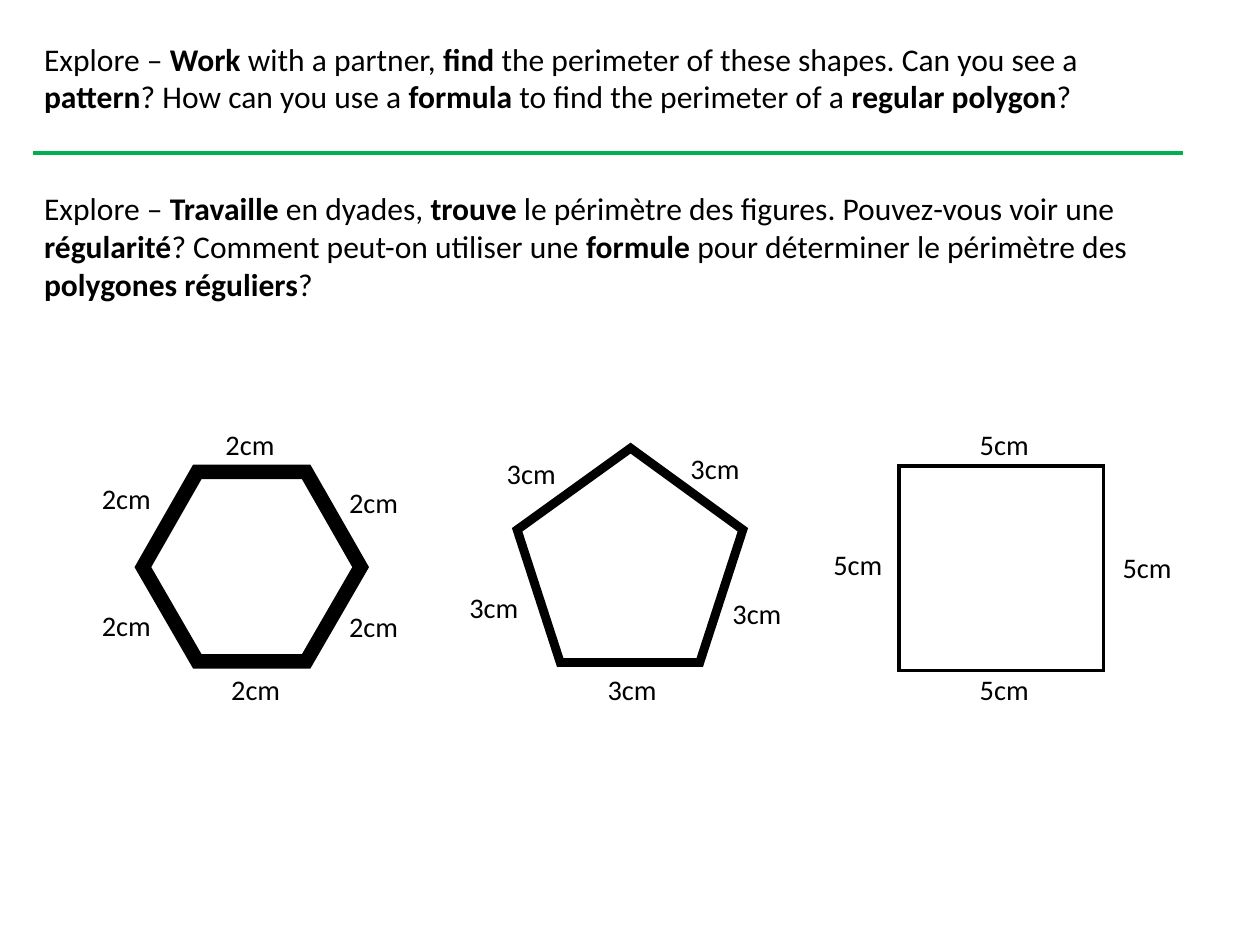
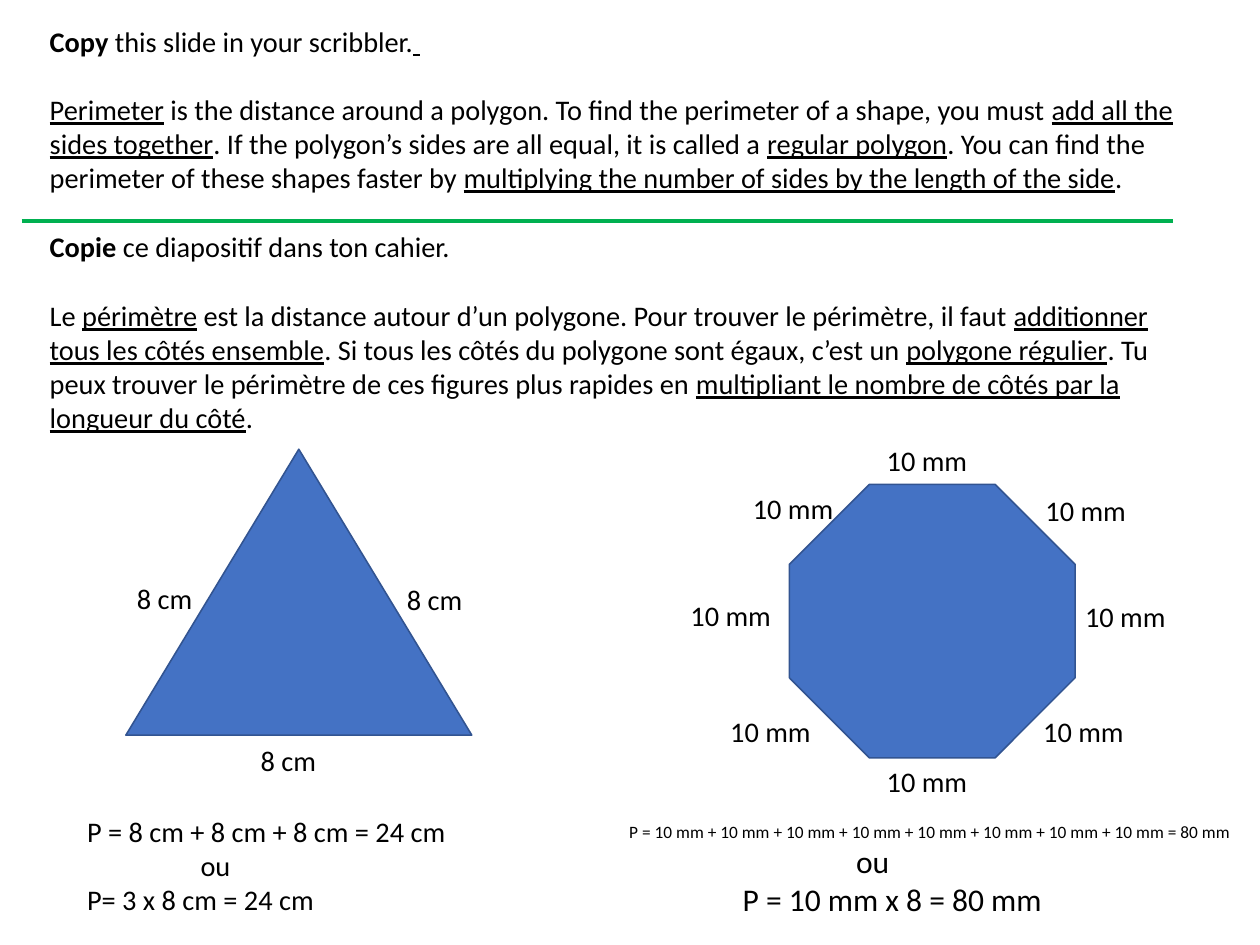
from math import cos, pi, sin

from pptx import Presentation
from pptx.dml.color import RGBColor
from pptx.enum.shapes import MSO_CONNECTOR, MSO_SHAPE
from pptx.oxml.ns import qn
from pptx.util import Pt
from lxml.etree import SubElement

PX = 9144
COLORS = {"text": "000000", "rule": "00B050", "fill": "4472C4", "edge": "325491"}
FONT = "Calibri"
LABEL_W, LABEL_H = 100, 40


def px(*values):
    return [v * PX for v in values]


def rgb(name):
    return RGBColor.from_string(COLORS[name])


def set_line(line, color, width):
    line.color.rgb = rgb(color)
    line.width = Pt(width)


def add_run(p, text, size, **formats):
    r = p.add_run()
    r.text = text
    r.font.color.rgb = rgb("text")
    for name, value in {"name": FONT, "size": Pt(size), **formats}.items():
        setattr(r.font, name, value)


def add_text(shapes, box, paragraphs, gap=0):
    tf = shapes.add_textbox(*px(*box)).text_frame
    tf.word_wrap = True
    for i, (text, size, indent) in enumerate(paragraphs):
        p = tf.add_paragraph() if i else tf.paragraphs[0]
        if i and gap:
            p.space_before = Pt(gap)
        if indent:
            p._p.get_or_add_pPr().set("marL", str(indent * PX))
        for b, part in enumerate(text.split("*")):
            for u, piece in enumerate(part.split("_")):
                if piece:
                    add_run(p, piece, size, bold=b % 2 == 1, underline=u % 2 == 1)


def add_rule(s, x, y, w):
    line = s.shapes.add_connector(MSO_CONNECTOR.STRAIGHT, *px(x, y, x + w, y))
    set_line(line.line, "rule", 2.25)
    SubElement(line._element.spPr, qn("a:effectLst"))


def add_labels(shapes, box, text, offsets):
    for dx, dy in offsets:
        add_text(shapes, (box[0] + dx, box[1] + dy, LABEL_W, LABEL_H), [(text, 18, 0)])


def outline_figure(s, box, sides, turn, width, label, offsets):
    x, y, w, h = box
    angles = [turn + 2 * pi * i / sides for i in range(sides)]
    xs, ys = [cos(a) for a in angles], [sin(a) for a in angles]
    points = [
        (
            round(x + w * (cx - min(xs)) / (max(xs) - min(xs))),
            round(y + h * (cy - min(ys)) / (max(ys) - min(ys))),
        )
        for cx, cy in zip(xs, ys)
    ]
    group = s.shapes.add_group_shape()
    builder = group.shapes.build_freeform(*points[0], scale=PX)
    builder.add_line_segments(points[1:], close=True)
    sp = builder.convert_to_shape()
    sp.shadow.inherit = False
    sp.fill.background()
    set_line(sp.line, "text", width)
    SubElement(sp.line._get_or_add_ln(), qn("a:miter")).set("lim", "800000")
    add_labels(group.shapes, box, label, offsets)


def solid_figure(s, box, kind, label, offsets):
    group = s.shapes.add_group_shape()
    sp = group.shapes.add_shape(kind, *px(*box))
    sp.shadow.inherit = False
    sp.fill.solid()
    sp.fill.fore_color.rgb = rgb("fill")
    set_line(sp.line, "edge", 1)
    add_labels(group.shapes, box, label, offsets)


def explore_slide(s):
    english = (
        "Explore – *Work *with a partner, *find *the perimeter of these shapes. "
        "Can you see a *pattern*? How can you use a *formula* to find the perimeter "
        "of a *regular polygon*?"
    )
    french = (
        "Explore – *Travaille* en dyades, *trouve* le périmètre des figures. "
        "Pouvez-vous voir une *régularité*? Comment peut-on utiliser une* formule "
        "*pour déterminer le périmètre des *polygones réguliers*?"
    )
    add_text(s.shapes, (29, 30, 979, 77), [(english, 20, 0)])
    add_rule(s, 29, 135, 1014)
    add_text(s.shapes, (29, 162, 999, 195), [(french, 20, 0)])
    figures = [
        ((126, 416, 192, 167), 6, 0, 9.2, "2cm",
         [(63, -44), (172, 7), (172, 116), (68, 172), (-46, 115), (-46, 3)]),
        ((456, 395, 199, 189), 5, -pi / 2, 5.65, "3cm",
         [(143, -2), (180, 126), (70, 193), (-52, 120), (-19, 2)]),
        ((793, 411, 180, 180), 4, pi / 4, 2.42, "5cm",
         [(61, -39), (187, 69), (61, 177), (-68, 66)]),
    ]
    for figure in figures:
        outline_figure(s, *figure)


def copy_slide(s):
    notes = [
        "*Copy *this slide in your scribbler._ _",
        "_Perimeter_ is the distance around a polygon. To find the perimeter of a "
        "shape, you must _add all the sides together_. If the polygon’s sides are all "
        "equal, it is called a _regular polygon_. You can find the perimeter of these "
        "shapes faster by _multiplying the number of sides by the length of the side_.",
        "*Copie* ce diapositif dans ton cahier.",
        "Le _périmètre_ est la distance autour d’un polygone. Pour trouver le "
        "périmètre, il faut _additionner tous les côtés ensemble_. Si tous les côtés "
        "du polygone sont égaux, c’est un _polygone régulier_. Tu peux trouver le "
        "périmètre de ces figures plus rapides en _multipliant le nombre de côtés par "
        "la longueur du côté_.",
    ]
    add_text(s.shapes, (34, 16, 1025, 374), [(n, 18, 0) for n in notes], gap=22)
    add_rule(s, 19, 195, 1015)
    solid_figure(s, (111, 396, 305, 252), MSO_SHAPE.ISOSCELES_TRIANGLE, "8 cm",
                 [(238, 112), (109, 254), (0, 111)])
    solid_figure(s, (696, 427, 252, 241), MSO_SHAPE.OCTAGON, "10 mm",
                 [(76, -41), (216, 3), (251, 96), (214, 198),
                  (76, 242), (-62, 198), (-97, 95), (-42, 1)])
    add_text(s.shapes, (67, 713, 424, 101), [
        ("P = " + " + ".join(["8 cm"] * 3) + " = 24 cm", 18, 0),
        ("ou", 18, 100),
        ("P= 3 x 8 cm = 24 cm", 18, 0),
    ])
    add_text(s.shapes, (545, 719, 560, 96), [
        ("P = " + " + ".join(["10 mm"] * 8) + " = 80 mm", 11, 0),
        ("ou", 20, 200),
        ("P = 10 mm x 8 = 80 mm", 20, 100),
    ])


def main():
    prs = Presentation()
    prs.slide_width, prs.slide_height = px(1111, 833)
    for build in (explore_slide, copy_slide):
        build(prs.slides.add_slide(prs.slide_layouts[6]))
    prs.save("out.pptx")


if __name__ == "__main__":
    main()
